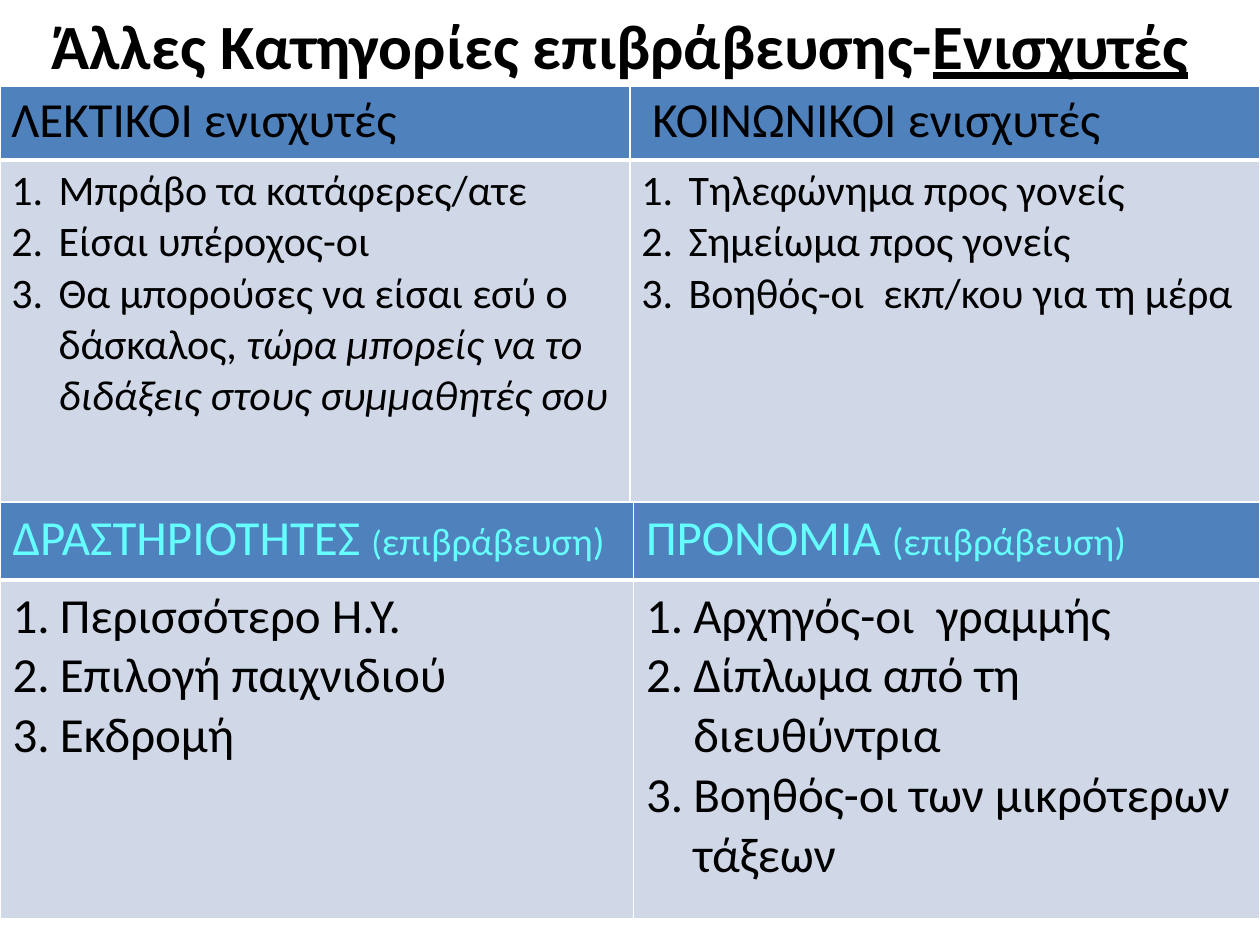
from lxml import etree
from pptx import Presentation
from pptx.dml.color import RGBColor
from pptx.enum.text import MSO_AUTO_SIZE, PP_ALIGN
from pptx.oxml.ns import qn
from pptx.util import Pt

CENTER = PP_ALIGN.CENTER
GROW = MSO_AUTO_SIZE.SHAPE_TO_FIT_TEXT
COLORS = {"header": "4F81BD", "body": "D0D8E8", "border": "FFFFFF",
          "text": "000000", "reward": "66FFFF"}
FONT = "Calibri"
NUMBER_INDENT = Pt(27)


def add_run(paragraph, text, size, color="text", bold=False, italic=False, underline=False):
    run = paragraph.add_run()
    run.text = text
    font = run.font
    font.name, font.size = FONT, Pt(size)
    font.bold, font.italic, font.underline = bold, italic, underline
    font.color.rgb = RGBColor.from_string(COLORS[color])


def style_cell(cell, fill, bottom_width, insets):
    cell.margin_left = cell.margin_right = Pt(insets[0])
    cell.margin_top = cell.margin_bottom = Pt(insets[1])
    properties = cell._tc.get_or_add_tcPr()
    for side, width in (("L", 1), ("R", 1), ("T", 1), ("B", bottom_width)):
        line = etree.SubElement(properties, qn(f"a:ln{side}"), w=str(Pt(width)))
        solid = etree.SubElement(line, qn("a:solidFill"))
        etree.SubElement(solid, qn("a:srgbClr"), val=COLORS["border"])
    cell.fill.solid()
    cell.fill.fore_color.rgb = RGBColor.from_string(COLORS[fill])


prs = Presentation()
prs.slide_width, prs.slide_height = Pt(720), Pt(540)
slide = prs.slides.add_slide(prs.slide_layouts[6])

title = slide.shapes.add_textbox(Pt(0), Pt(0), Pt(708.5), Pt(51)).text_frame
title.word_wrap = True
title.auto_size = GROW
heading = title.paragraphs[0]
heading.alignment = CENTER
add_run(heading, "Άλλες Κατηγορίες επιβράβευσης-", 36, bold=True)
add_run(heading, "Ενισχυτές", 36, bold=True, underline=True)

reinforcer_tables = [
    {
        "top": 49, "columns": (360, 360), "rows": (42.5, 195.5), "insets": (6.5, 3.2),
        "header_color": "text", "body_size": 24,
        "headers": [
            [("ΛΕΚΤΙΚΟΙ ενισχυτές", 28)],
            [(" ΚΟΙΝΩΝΙΚΟΙ ενισχυτές", 28)],
        ],
        "lists": [
            [
                [("Μπράβο τα κατάφερες/ατε", False)],
                [("Είσαι υπέροχος-οι", False)],
                [("Θα μπορούσες να είσαι εσύ ο δάσκαλος, ", False),
                 ("τώρα μπορείς να το διδάξεις στους συμμαθητές σου", True)],
            ],
            [
                [("Τηλεφώνημα προς γονείς", False)],
                [("Σημείωμα προς γονείς", False)],
                [("Βοηθός-οι  εκπ/κου για τη μέρα", False)],
            ],
        ],
    },
    {
        "top": 287, "columns": (362, 358), "rows": (44.5, 193.5), "insets": (7.2, 3.6),
        "header_color": "reward", "body_size": 28,
        "headers": [
            [("ΔΡΑΣΤΗΡΙΟΤΗΤΕΣ ", 28), ("(", 20), ("επιβράβευση)", 22)],
            [("ΠΡΟΝΟΜΙΑ ", 28), ("(επιβράβευση)", 22)],
        ],
        "lists": [
            [
                [("Περισσότερο Η.Υ.", False)],
                [("Επιλογή παιχνιδιού", False)],
                [("Εκδρομή", False)],
            ],
            [
                [("Αρχηγός-οι  γραμμής", False)],
                [("Δίπλωμα από τη διευθύντρια", False)],
                [("Βοηθός-οι των μικρότερων τάξεων", False)],
            ],
        ],
    },
]

for group in reinforcer_tables:
    table = slide.shapes.add_table(2, 2, Pt(0), Pt(group["top"]), Pt(720),
                                   Pt(sum(group["rows"]))).table
    for row, height in zip(table.rows, group["rows"]):
        row.height = Pt(height)
    for index, width in enumerate(group["columns"]):
        table.columns[index].width = Pt(width)

        header = table.cell(0, index)
        style_cell(header, "header", 3, group["insets"])
        for text, size in group["headers"][index]:
            add_run(header.text_frame.paragraphs[0], text, size, group["header_color"])

        body = table.cell(1, index)
        style_cell(body, "body", 1, group["insets"])
        for position, item in enumerate(group["lists"][index]):
            frame = body.text_frame
            paragraph = frame.add_paragraph() if position else frame.paragraphs[0]
            numbering = paragraph._p.get_or_add_pPr()
            numbering.set("marL", str(NUMBER_INDENT))
            numbering.set("indent", str(-NUMBER_INDENT))
            etree.SubElement(numbering, qn("a:buFont"), typeface="+mj-lt")
            etree.SubElement(numbering, qn("a:buAutoNum"), type="arabicPeriod")
            for text, italic in item:
                add_run(paragraph, text, group["body_size"], italic=italic)

prs.save("out.pptx")
